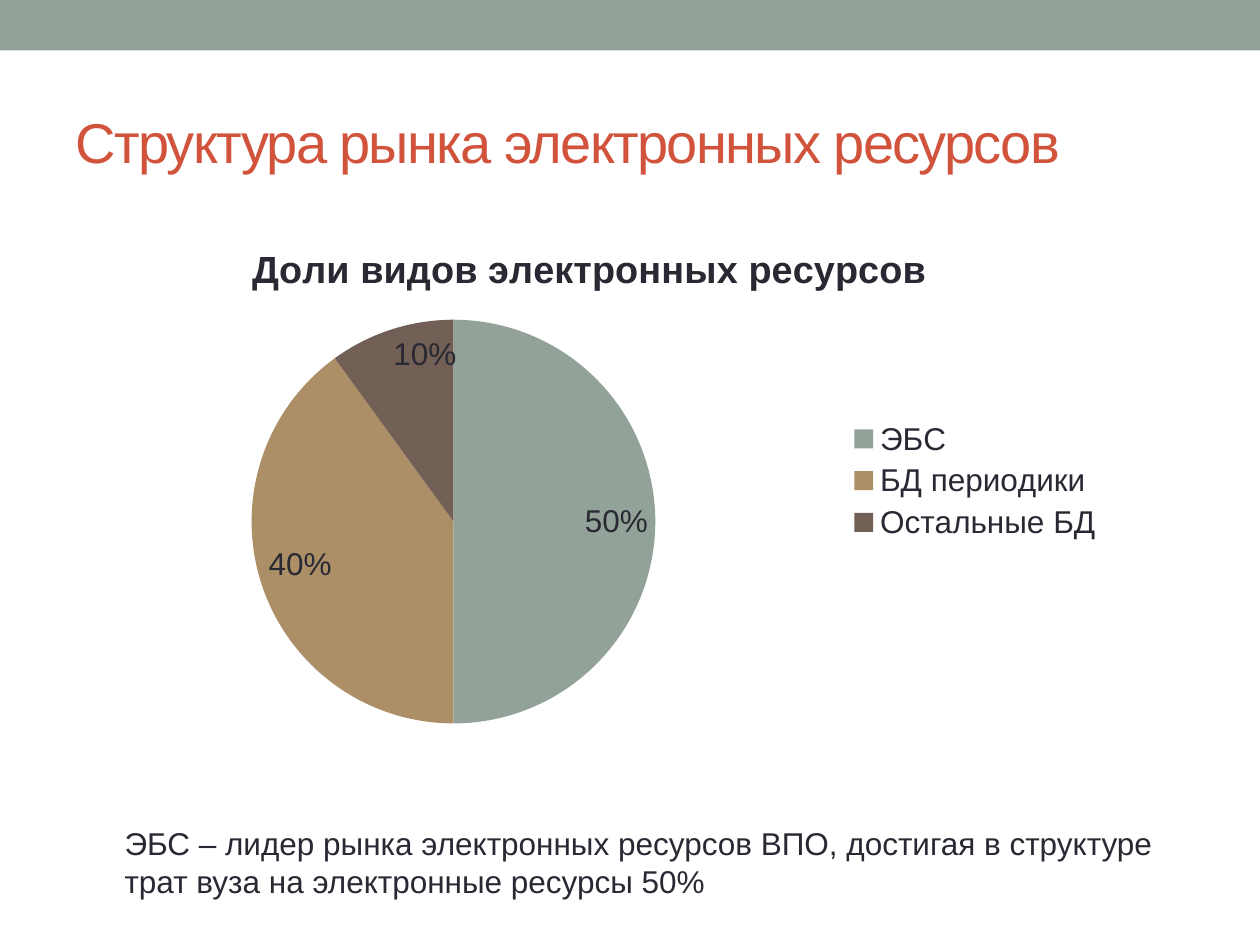
from dataclasses import dataclass

from pptx import Presentation
from pptx.chart.data import CategoryChartData
from pptx.dml.color import RGBColor
from pptx.enum.chart import XL_CHART_TYPE as ChartType, XL_LABEL_POSITION as LabelPosition
from pptx.enum.chart import XL_LEGEND_POSITION as LegendPosition
from pptx.enum.shapes import MSO_SHAPE as Shape
from pptx.enum.text import MSO_ANCHOR as Anchor, MSO_AUTO_SIZE as AutoSize
from pptx.util import Inches, Pt

HEADING = "Структура рынка электронных ресурсов"
CHART_TITLE = "Доли видов электронных ресурсов"
SHARES = [("ЭБС", 0.5), ("БД периодики", 0.4), ("Остальные БД", 0.1)]
CONCLUSION = (
    "ЭБС – лидер рынка электронных ресурсов ВПО, достигая в структуре "
    "трат вуза на электронные ресурсы 50%"
)


@dataclass(frozen=True)
class Theme:
    font: str = "Arial"
    accent: str = "D2533C"
    ink: str = "292934"
    band: str = "93A299"
    slices: tuple = ("93A299", "AD8F67", "726056")
    heading_size: float = 32
    chart_title_size: float = 21.6
    body_size: float = 18


THEME = Theme()


def paint(fill, color):
    fill.solid()
    fill.fore_color.rgb = RGBColor.from_string(color)


def style(font, size, color, bold=False):
    font.name = THEME.font
    font.size = Pt(size)
    font.bold = bold
    font.color.rgb = RGBColor.from_string(color)


def add_text(slide, box, text, size, color, anchor=Anchor.TOP):
    frame = slide.shapes.add_textbox(*map(Inches, box)).text_frame
    frame.word_wrap = True
    frame.vertical_anchor = anchor
    frame.text = text
    style(frame.paragraphs[0].runs[0].font, size, color)
    return frame


def add_shares_chart(slide, box):
    shares = CategoryChartData(number_format="0%")
    shares.categories = [name for name, _ in SHARES]
    shares.add_series("Series 1", [share for _, share in SHARES])
    chart = slide.shapes.add_chart(ChartType.PIE, *map(Inches, box), shares).chart
    style(chart.font, THEME.body_size, THEME.ink)

    chart.has_title = True
    title = chart.chart_title.text_frame
    title.text = CHART_TITLE
    style(title.paragraphs[0].runs[0].font, THEME.chart_title_size, THEME.ink, bold=True)

    chart.has_legend = True
    chart.legend.position = LegendPosition.RIGHT
    chart.legend.include_in_layout = False

    plot = chart.plots[0]
    plot.vary_by_categories = True
    for index, color in enumerate(THEME.slices):
        paint(plot.series[0].points[index].format.fill, color)

    labels = plot.series[0].data_labels
    labels.show_value = True
    labels.number_format = "0%"
    labels.number_format_is_linked = False
    labels.position = LabelPosition.INSIDE_END
    style(labels.font, THEME.body_size, THEME.ink)


def main():
    deck = Presentation()
    deck.slide_width, deck.slide_height = Inches(10), Inches(7.5)
    slide = deck.slides.add_slide(deck.slide_layouts[6])

    band = slide.shapes.add_shape(Shape.RECTANGLE, 0, 0, deck.slide_width, Inches(0.4))
    band.shadow.inherit = False
    paint(band.fill, THEME.band)
    band.line.fill.background()

    heading = add_text(slide, (0.5, 0.58, 9, 1.08), HEADING,
                       THEME.heading_size, THEME.accent, Anchor.MIDDLE)
    heading.paragraphs[0].runs[0].font._element.set("spc", "-100")

    add_shares_chart(slide, (0.5, 1.75, 8.36, 4.13))

    conclusion = add_text(slide, (0.89, 6.49, 8.9, 0.71), CONCLUSION,
                          THEME.body_size, THEME.ink)
    conclusion.auto_size = AutoSize.SHAPE_TO_FIT_TEXT

    deck.save("out.pptx")


if __name__ == "__main__":
    main()
